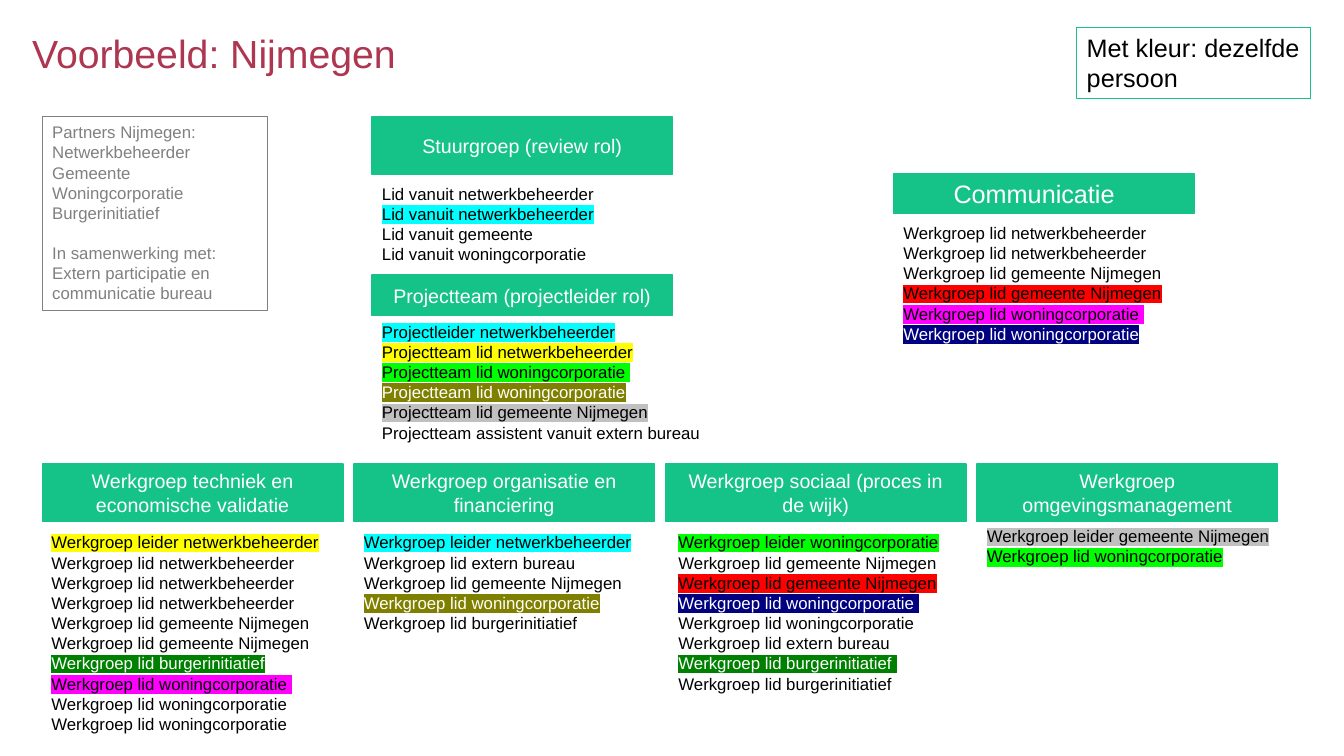
from dataclasses import dataclass
from typing import Any, NamedTuple

from lxml.etree import SubElement
from pptx import Presentation
from pptx.dml.color import RGBColor
from pptx.enum.shapes import MSO_SHAPE
from pptx.enum.text import MSO_ANCHOR, MSO_AUTO_SIZE, PP_ALIGN
from pptx.oxml.ns import qn
from pptx.util import Inches, Length, Pt

GREEN, GREY, BLACK, WHITE = "15C389", "808080", "000000", "FFFFFF"
CYAN, YELLOW, LIME, OLIVE = "00FFFF", "FFFF00", "00FF00", "808000"
SILVER, RED, MAGENTA = "C0C0C0", "FF0000", "FF00FF"
NAVY, FOREST = "000080", "008000"
DARK_MARKS = {OLIVE, NAVY, FOREST}

COLUMN_LEFT, COLUMN_STEP, COLUMN_WIDTH = 3.15, 23.18, 22.36
TALL, LOW = 7.6, 5.33
WORKGROUP_TOP, WORKGROUP_LIST_TOP = 61.4, 69.73
LIST_PADDING, LIST_ROW = 1.33, 2.69

NETWERK = "Werkgroep lid netwerkbeheerder"
GEMEENTE = "Werkgroep lid gemeente Nijmegen"
WONING = "Werkgroep lid woningcorporatie"
BURGER = "Werkgroep lid burgerinitiatief"
EXTERN = "Werkgroep lid extern bureau"


class Line(NamedTuple):
    text: str
    mark: str = ""
    before: float = 0


class Box(NamedTuple):
    x: float
    y: float
    w: float
    h: float


@dataclass
class Group:
    title: str
    header: Box
    list_top: float
    lines: list[Line]
    list_shift: float = 0
    list_width: float = COLUMN_WIDTH
    size: int = 14
    right: float = 0.16


def column(n: int) -> float:
    return COLUMN_LEFT + COLUMN_STEP * n


def workgroup_box(n: int) -> Box:
    return Box(column(n), WORKGROUP_TOP, COLUMN_WIDTH, TALL)


GROUPS = [
    Group("Stuurgroep (review rol)", Box(27.68, 15.47, COLUMN_WIDTH, TALL), 23.6, [
        Line("Lid vanuit netwerkbeheerder"),
        Line("Lid vanuit netwerkbeheerder", CYAN),
        Line("Lid vanuit gemeente"),
        Line("Lid vanuit woningcorporatie"),
    ]),
    Group("Projectteam (projectleider rol)", Box(27.68, 36.4, COLUMN_WIDTH, LOW), 41.87, [
        Line("Projectleider netwerkbeheerder", CYAN),
        Line("Projectteam lid netwerkbeheerder", YELLOW),
        Line("Projectteam lid woningcorporatie ", LIME),
        Line("Projectteam lid woningcorporatie", OLIVE),
        Line("Projectteam lid gemeente Nijmegen", SILVER),
        Line("Projectteam assistent vanuit extern bureau"),
    ], list_width=26.26),
    Group("Communicatie ", Box(66.47, 22.93, COLUMN_WIDTH, LOW), 28.8, [
        Line(NETWERK), Line(NETWERK), Line(GEMEENTE), Line(GEMEENTE, RED),
        Line(WONING + " ", MAGENTA), Line(WONING, NAVY),
    ], size=18, right=0.28),
    Group("Werkgroep techniek en economische validatie", workgroup_box(0), WORKGROUP_LIST_TOP, [
        Line("Werkgroep leider netwerkbeheerder", YELLOW),
        Line(NETWERK), Line(NETWERK), Line(NETWERK), Line(GEMEENTE), Line(GEMEENTE),
        Line(BURGER, FOREST), Line(WONING + " ", MAGENTA), Line(WONING), Line(WONING),
    ], list_shift=-0.07),
    Group("Werkgroep organisatie en financiering", workgroup_box(1), WORKGROUP_LIST_TOP, [
        Line("Werkgroep leider netwerkbeheerder", CYAN),
        Line(EXTERN), Line(GEMEENTE), Line(WONING, OLIVE), Line(BURGER),
    ]),
    Group("Werkgroep sociaal (proces in de wijk)", workgroup_box(2), WORKGROUP_LIST_TOP, [
        Line("Werkgroep leider woningcorporatie", LIME),
        Line(GEMEENTE), Line(GEMEENTE, RED), Line(WONING + " ", NAVY), Line(WONING),
        Line(EXTERN), Line(BURGER + " ", FOREST), Line(BURGER),
    ], list_shift=0.23),
    Group("Werkgroep omgevingsmanagement", workgroup_box(3), 68.93, [
        Line("Werkgroep leider gemeente Nijmegen", SILVER), Line(WONING, LIME),
    ], list_width=24.16),
]

PARTNERS = [
    Line("Partners Nijmegen:"), Line("Netwerkbeheerder"), Line("Gemeente"),
    Line("Woningcorporatie"), Line("Burgerinitiatief"),
    Line("In samenwerking met:", before=14.4),
    Line("Extern participatie en communicatie bureau"),
]

prs = Presentation()
prs.slide_width, prs.slide_height = Inches(13.33), Inches(7.5)
slide = prs.slides.add_slide(prs.slide_layouts[6])


def rgb(value: str) -> RGBColor:
    return RGBColor.from_string(value)


def place(box: Box) -> list[Length]:
    sides = (prs.slide_width, prs.slide_height) * 2
    return [Length(round(side * share / 100)) for side, share in zip(sides, box)]


def apply(target: Any, values: dict[str, Any]) -> None:
    for name, value in values.items():
        setattr(target, name, value)


def write(sp: Any, lines: list[Line], size: int, color: str,
          frame: dict[str, Any], para: dict[str, Any]) -> None:
    tf = sp.text_frame
    apply(tf, {"word_wrap": True, "vertical_anchor": MSO_ANCHOR.TOP} | frame)
    for i, line in enumerate(lines):
        p = tf.add_paragraph() if i else tf.paragraphs[0]
        apply(p, {"alignment": PP_ALIGN.LEFT, "space_before": Pt(line.before)} | para)
        r = p.add_run()
        r.text = line.text
        apply(r.font, {"name": "Arial", "size": Pt(size)})
        r.font.color.rgb = rgb(WHITE if line.mark in DARK_MARKS else color)
        if line.mark:
            rpr = r.font._element
            highlight = SubElement(rpr, qn("a:highlight"))
            SubElement(highlight, qn("a:srgbClr"), val=line.mark)
            rpr.find(qn("a:solidFill")).addnext(highlight)


def add_text(box: Box, lines: list[Line], size: int, color: str, **para: Any) -> None:
    sp = slide.shapes.add_textbox(*place(box))
    write(sp, lines, size, color, {}, para)


def add_rect(box: Box, line: str, width: float, fill: str = "") -> Any:
    sp = slide.shapes.add_shape(MSO_SHAPE.RECTANGLE, *place(box))
    sp.shadow.inherit = False
    if fill:
        sp.fill.solid()
        sp.fill.fore_color.rgb = rgb(fill)
    else:
        sp.fill.background()
    sp.line.color.rgb = rgb(line)
    sp.line.width = Pt(width)
    return sp


def add_note(box: Box, lines: list[Line], size: int, color: str, border: str) -> None:
    sp = add_rect(box, border, 0.75)
    write(sp, lines, size, color, {"auto_size": MSO_AUTO_SIZE.SHAPE_TO_FIT_TEXT}, {})


def add_group(group: Group) -> None:
    sp = add_rect(group.header, GREEN, 1, GREEN)
    frame = {"vertical_anchor": MSO_ANCHOR.MIDDLE, "margin_top": 0, "margin_bottom": 0,
             "margin_left": Inches(0.16), "margin_right": Inches(group.right)}
    write(sp, [Line(group.title)], group.size, WHITE, frame, {"alignment": PP_ALIGN.CENTER})
    height = LIST_PADDING + LIST_ROW * len(group.lines)
    box = Box(group.header.x + group.list_shift, group.list_top, group.list_width, height)
    add_text(box, group.lines, 12, BLACK)


def main() -> None:
    add_text(Box(1.65, 3.87, 86.27, 15.73), [Line("Voorbeeld: Nijmegen")], 28, "AD3651",
             line_spacing=0.9)
    for group in GROUPS:
        add_group(group)
    add_note(Box(80.12, 3.6, 17.4, 9.47), [Line("Met kleur: dezelfde persoon")], 18, BLACK, GREEN)
    add_note(Box(COLUMN_LEFT, 15.47, 16.73, 25.6), PARTNERS, 12, GREY, GREY)
    prs.save("out.pptx")


if __name__ == "__main__":
    main()
